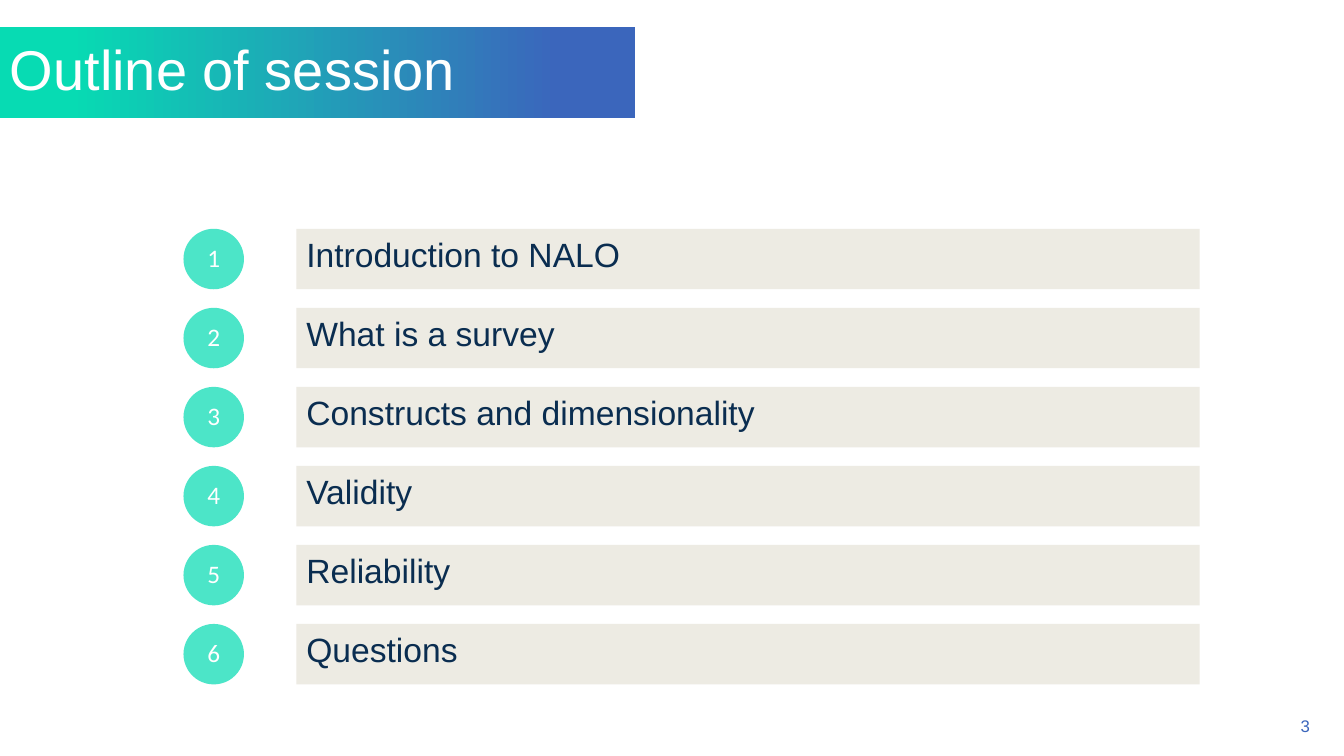
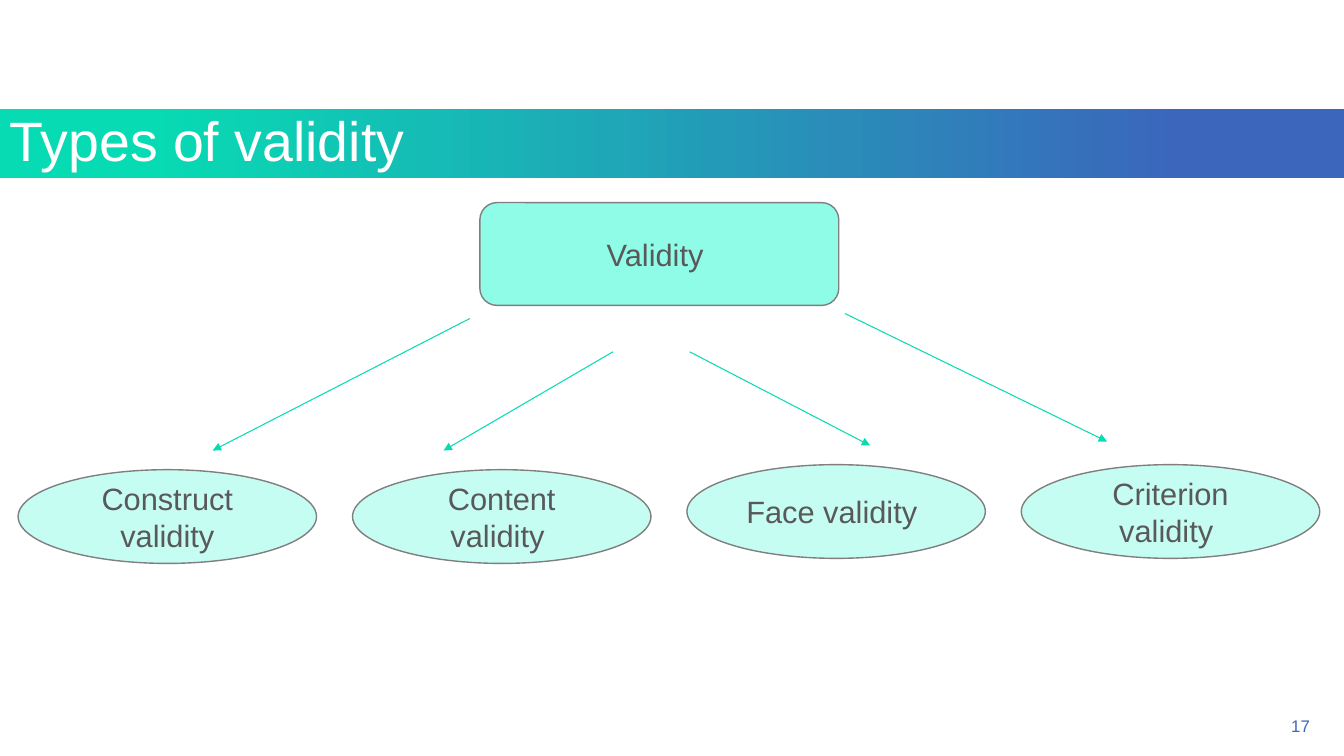
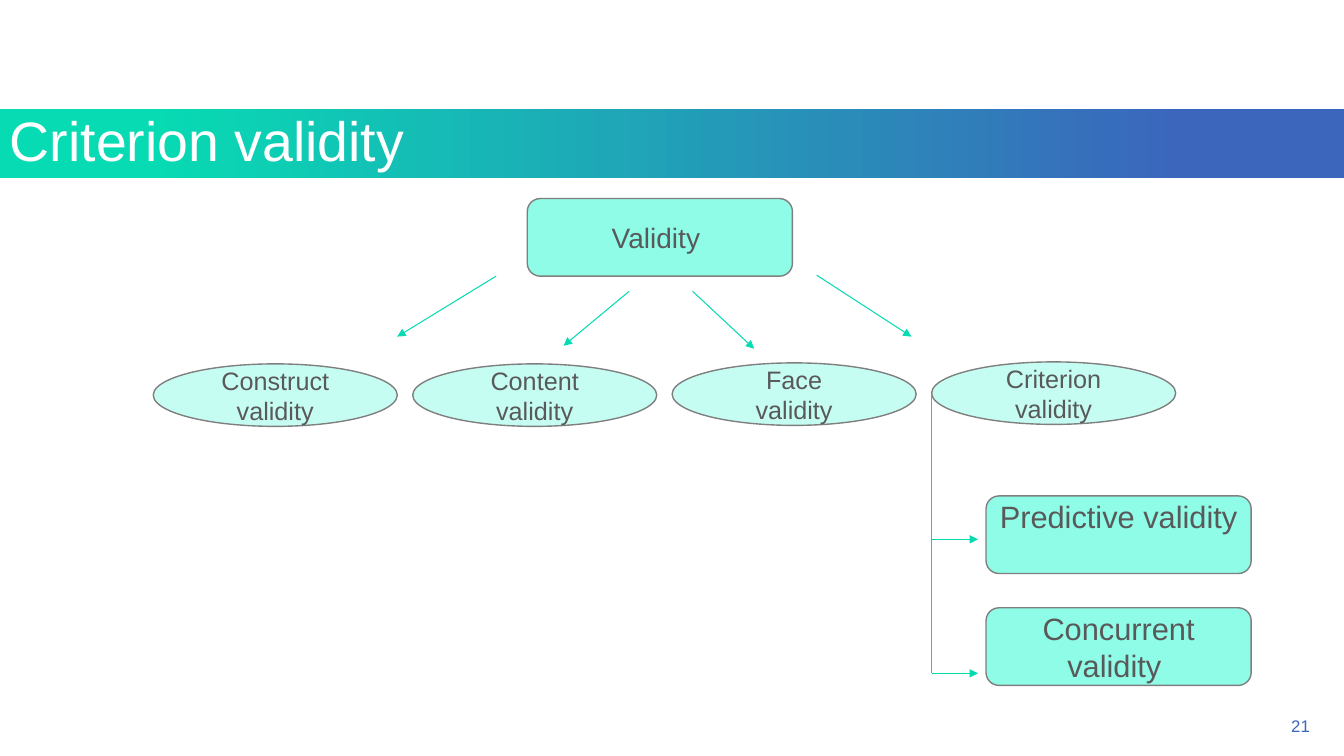
from lxml import etree
from pptx import Presentation
from pptx.dml.color import RGBColor
from pptx.enum import shapes, text
from pptx.oxml import ns
from pptx.util import Inches, Pt

COLORS = {
    "white": "FFFFFF", "blue": "3B66BC", "green": "07DBB3", "bracket": "00DAB1",
    "sand": "EDEBE3", "navy": "0A2D50", "mint": "8EFCE7", "pale": "C6FDF3",
    "outline": "7F7F7F", "gray": "595959",
}
BAND_STOPS = [(0, "blue"), (12, "blue"), (89, "green"), (100, "green")]
KIND = shapes.MSO_SHAPE
ALIGN = text.PP_ALIGN
ANCHOR = text.MSO_ANCHOR


def color(name):
    return RGBColor.from_string(COLORS[name])


def child(parent, tag, **attributes):
    return etree.SubElement(parent, ns.qn(tag), attributes)


def write(shape, lines, size, ink, align=ALIGN.LEFT, anchor=ANCHOR.TOP,
          face="Arial", spacing=None):
    frame = shape.text_frame
    frame.word_wrap = True
    frame.vertical_anchor = anchor
    for index, line in enumerate(lines):
        para = frame.add_paragraph() if index else frame.paragraphs[0]
        para.alignment = align
        para.line_spacing = spacing
        span = para.add_run()
        span.text = line
        span.font.name = face
        span.font.size = Pt(size)
        span.font.color.rgb = color(ink)


def add_block(page, kind, box, fill, outline=None):
    block = page.shapes.add_shape(kind, *map(Inches, box))
    block.shadow.inherit = False
    block.fill.solid()
    block.fill.fore_color.rgb = color(fill)
    if outline:
        block.line.color.rgb = color(outline)
        block.line.width = Pt(1)
    else:
        block.line.fill.background()
    return block


def add_node(page, kind, box, fill, lines, size):
    node = add_block(page, kind, box, fill, "outline")
    write(node, lines, size, "gray", ALIGN.CENTER, ANCHOR.MIDDLE)


def add_line(page, origin, start, end, ink="green", arrow=True):
    left, top = origin
    line = page.shapes.add_connector(
        shapes.MSO_CONNECTOR.STRAIGHT,
        Inches(left + start[0]), Inches(top + start[1]),
        Inches(left + end[0]), Inches(top + end[1]))
    line.line.color.rgb = color(ink)
    line.line.width = Pt(0.75)
    if arrow:
        child(line.line._get_or_add_ln(), "a:tailEnd", type="triangle")
    child(line._element.spPr, "a:effectLst")


def add_title(page, box, title, size):
    band = add_block(page, KIND.RECTANGLE, box, "blue")
    band.fill.gradient()
    band.fill.gradient_angle = 180
    stops = band._element.spPr.find(".//" + ns.qn("a:gsLst"))
    for stop in list(stops):
        stops.remove(stop)
    for position, name in BAND_STOPS:
        stop = child(stops, "a:gs", pos=str(position * 1000))
        child(stop, "a:srgbClr", val=COLORS[name])
    write(band, [title], size, "white", anchor=ANCHOR.MIDDLE, spacing=0.9)


def add_page(deck, title, number, band=(0, 1.08, 13.33, 0.69), size=39.6):
    page = deck.slides.add_slide(deck.slide_layouts[6])
    add_title(page, band, title, size)
    footer = page.shapes.add_textbox(*map(Inches, (10.09, 7.1, 3, 0.25)))
    write(footer, [number], 12, "blue", ALIGN.RIGHT, ANCHOR.BOTTOM)
    return page


def add_agenda(page, box, topics):
    left, top, width, height = box
    side, indent = 0.6, 1.12
    pitch = (height - side) / (len(topics) - 1)
    for index, topic in enumerate(topics):
        row = top + index * pitch
        badge = add_block(page, KIND.OVAL, (left, row, side, side), "green")
        tint = badge._element.spPr.find(".//" + ns.qn("a:srgbClr"))
        child(tint, "a:alpha", val="72000")
        write(badge, [str(index + 1)], 18, "white", ALIGN.CENTER, face="Calibri")
        bar = add_block(page, KIND.RECTANGLE,
                        (left + indent, row, width - indent, side), "sand")
        write(bar, [topic], 24, "navy")


def add_tree(page, box, root, root_size, leaf, leaf_size, leaves, arrows):
    left, top, width, height = box
    root_left, root_width, root_height = root
    leaf_width, leaf_height = leaf
    add_node(page, KIND.FLOWCHART_ALTERNATE_PROCESS,
             (left + root_left, top, root_width, root_height),
             "mint", ["Validity "], root_size)
    pitch = (width - leaf_width) / (len(leaves) - 1)
    for index, (lift, lines) in enumerate(leaves):
        leaf_top = top + height - leaf_height - lift
        add_node(page, KIND.OVAL,
                 (left + index * pitch, leaf_top, leaf_width, leaf_height),
                 "pale", lines, leaf_size)
    for start, end in arrows:
        add_line(page, (left, top), start, end)


def add_branches(page, box, branches):
    left, top, width, height = box
    node_left, node_height = 0.54, 0.77
    lowest = max(arrow_top for arrow_top, node_top, label in branches)
    add_line(page, (left, top), (0, 0), (0, lowest), "bracket", False)
    for arrow_top, node_top, label in branches:
        add_line(page, (left, top), (0, arrow_top), (0.46, arrow_top), "bracket")
        add_node(page, KIND.FLOWCHART_ALTERNATE_PROCESS,
                 (left + node_left, top + node_top, width - node_left, node_height),
                 "mint", [label], 22)


def build_outline(deck):
    page = add_page(deck, "Outline of session", "3", (0, 0.27, 6.3, 0.9), 40)
    add_agenda(page, (1.82, 2.27, 10.08, 4.52), [
        "Introduction to NALO", "What is a survey", "Constructs and dimensionality",
        "Validity", "Reliability", "Questions"])


def build_types(deck):
    page = add_page(deck, "Types of validity", "17")
    add_tree(
        page, (0.18, 2.01, 12.91, 3.58), (4.58, 3.56, 1.02), 22, (2.96, 0.93), 22,
        [(0, ["Construct", " validity "]), (0, ["Content validity "]),
         (0.05, ["Face validity "]), (0.05, ["Criterion validity "])],
        [((4.48, 1.15), (1.93, 2.46)), ((5.9, 1.48), (4.22, 2.46)),
         ((6.66, 1.48), (8.45, 2.41)), ((8.2, 1.1), (10.8, 2.37))])


def build_criterion(deck):
    page = add_page(deck, "Criterion validity", "21")
    names = ["Construct", "Content", "Face", "Criterion"]
    lifts = [0, 0, 0.01, 0.02]
    add_tree(
        page, (1.52, 1.97, 10.14, 2.26), (3.71, 2.63, 0.77), 20, (2.42, 0.62), 18,
        [(lift, [name, " validity "]) for lift, name in zip(lifts, names)],
        [((3.4, 0.77), (2.42, 1.37)), ((4.72, 0.92), (4.07, 1.46)),
         ((5.35, 0.92), (5.96, 1.49)), ((6.58, 0.76), (7.52, 1.37))])
    add_branches(page, (9.24, 3.92, 3.17, 2.88), [
        (1.43, 1, "Predictive validity  "), (2.76, 2.11, "Concurrent validity ")])


def main():
    deck = Presentation()
    deck.slide_width = Inches(13.33)
    deck.slide_height = Inches(7.5)
    build_outline(deck)
    build_types(deck)
    build_criterion(deck)
    deck.save("out.pptx")


if __name__ == "__main__":
    main()
